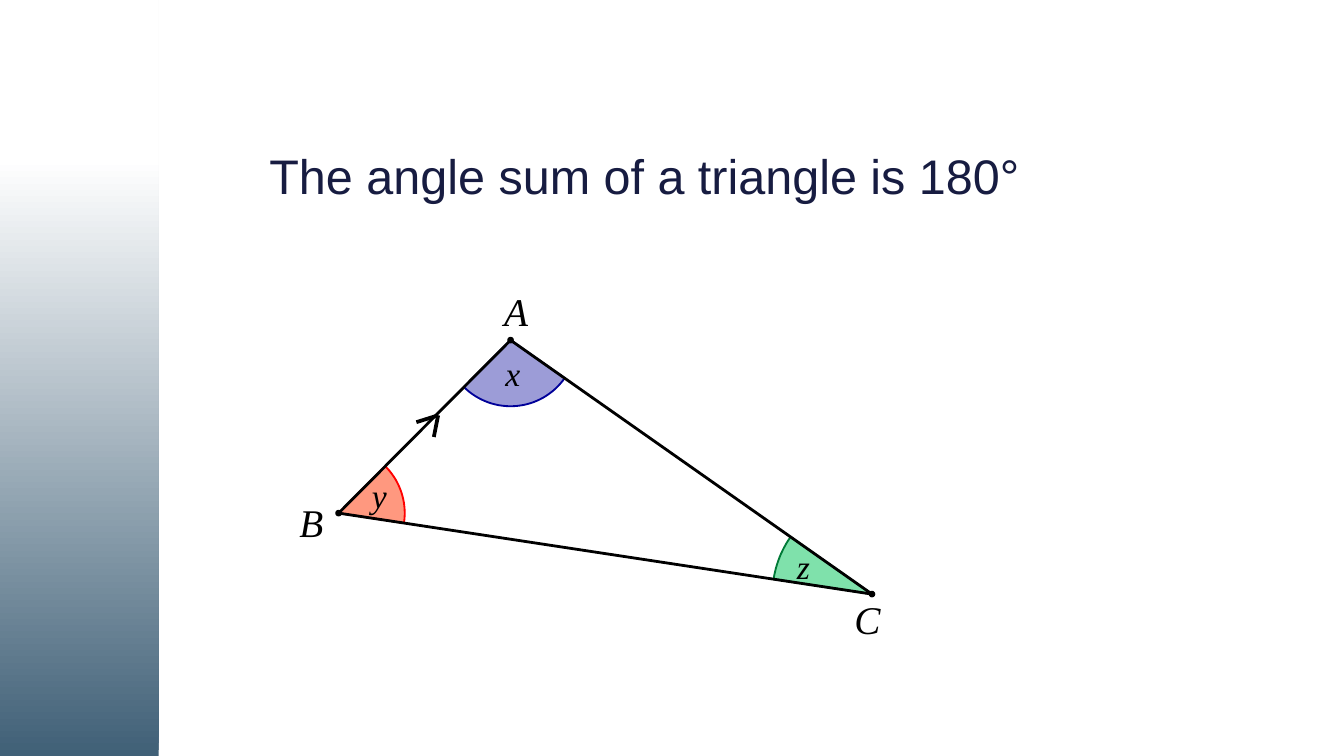
from math import atan2, cos, sin

from lxml.etree import SubElement
from pptx import Presentation
from pptx.dml.color import RGBColor
from pptx.enum.shapes import MSO_CONNECTOR as Connector, MSO_SHAPE as Shape
from pptx.enum.text import MSO_ANCHOR as Anchor
from pptx.oxml.ns import qn
from pptx.util import Cm, Pt

BLACK = RGBColor(0x00, 0x00, 0x00)
WHITE = RGBColor(0xFF, 0xFF, 0xFF)
NAVY = RGBColor(0x17, 0x1C, 0x41)
SLATE = RGBColor(0x40, 0x60, 0x77)
BLUE = RGBColor(0x00, 0x00, 0x99)
ORANGE = RGBColor(0xFF, 0x33, 0x00)
RED = RGBColor(0xFF, 0x00, 0x00)
GREEN = RGBColor(0x00, 0xC4, 0x59)
DARK_GREEN = RGBColor(0x00, 0x7A, 0x37)

TITLE_FORMAT = {"name": "Arial", "size": Pt(26)}
VERTEX_FORMAT = {"name": "Times New Roman", "size": Pt(21), "italic": True}
ANGLE_FORMAT = {"name": "Times New Roman", "size": Pt(18), "italic": True}

VERTICES = {"A": (4.05, 1.03), "B": (0.8, 4.3), "C": (10.88, 5.83)}
VERTEX_LABELS = {"A": (3.93, 0.04), "B": (0.06, 4.02), "C": (10.55, 5.85)}
ANGLE_LABELS = {"x": (3.7, 1.15), "y": (1.18, 3.44), "z": (9.21, 4.79)}
ANGLES = [
    ("A", "BC", 1.25, BLUE, 39, BLUE),
    ("B", "AC", 1.25, ORANGE, 50, RED),
    ("C", "AB", 1.88, GREEN, 50, DARK_GREEN),
]
ARROW_TIP = (2.68, 2.45)
ARROW_TAILS = [(2.6, 2.86), (2.27, 2.58)]


def add_text(page, text, box, formats, color, inset=(0, 0), wrap=True):
    """Place one styled line of text in a box of centimetres."""
    frame = page.shapes.add_textbox(*map(Cm, box)).text_frame
    frame.word_wrap = wrap
    frame.vertical_anchor = Anchor.TOP
    frame.margin_left = frame.margin_right = Cm(inset[0])
    frame.margin_top = frame.margin_bottom = Cm(inset[1])
    para = frame.paragraphs[0]
    span = para.add_run()
    span.text = text
    for name, value in formats.items():
        setattr(span.font, name, value)
    span.font.color.rgb = color
    return para


def add_line(page, start, end, width):
    """Draw a black straight line between two points."""
    line = page.shapes.add_connector(Connector.STRAIGHT, *map(Cm, (*start, *end)))
    line.line.color.rgb = BLACK
    line.line.width = Pt(width)
    SubElement(line._element.spPr, qn("a:effectLst"))


def add_sector(page, vertex, ends, radius, fill, opacity, outline):
    """Draw the translucent sector between two sides of an angle."""
    first, last = (atan2(y - vertex[1], x - vertex[0]) for x, y in ends)
    steps = 32
    turns = [first + (last - first) * step / steps for step in range(steps + 1)]
    arc = [
        (Cm(vertex[0] + radius * cos(turn)), Cm(vertex[1] + radius * sin(turn)))
        for turn in turns
    ]
    builder = page.shapes.build_freeform(*map(Cm, vertex))
    builder.add_line_segments(arc, close=True)
    sector = builder.convert_to_shape()
    sector.shadow.inherit = False
    sector.fill.solid()
    sector.fill.fore_color.rgb = fill
    color = sector._element.spPr.find(qn("a:solidFill"))[0]
    SubElement(color, qn("a:alpha"), val=str(opacity * 1000))
    sector.line.color.rgb = outline
    sector.line.width = Pt(1)


def add_dot(page, center):
    """Mark a vertex with a small black dot."""
    size = 0.1
    dot = page.shapes.add_shape(
        Shape.OVAL, Cm(center[0] - size / 2), Cm(center[1] - size / 2), Cm(size), Cm(size)
    )
    dot.shadow.inherit = False
    dot.fill.solid()
    dot.fill.fore_color.rgb = BLACK
    dot.line.color.rgb = BLACK
    dot.line.width = Pt(0)


def draw_sidebar(page, box):
    """Fill the left band with a gradient that fades upwards."""
    band = page.shapes.add_shape(Shape.RECTANGLE, *map(Cm, box))
    band.shadow.inherit = False
    band.line.fill.background()
    band.fill.gradient()
    band.fill.gradient_angle = 90
    stops = [(0, SLATE), (0.79, WHITE)]
    for stop, (position, color) in zip(band.fill.gradient_stops, stops):
        stop.position = position
        stop.color.rgb = color


def draw_title(page, box):
    """Write the statement above the diagram."""
    para = add_text(
        page, "The angle sum of a triangle is 180°", box, TITLE_FORMAT, NAVY, (0.19, 0.1)
    )
    para.line_spacing = 0.9


def draw_triangle(page, box):
    """Draw the labelled triangle with its three angles."""
    left, top = box

    def place(point):
        """Shift a diagram point onto the page."""
        return left + point[0], top + point[1]

    corners = {name: place(point) for name, point in VERTICES.items()}
    for name, ends, *style in ANGLES:
        add_sector(page, corners[name], [corners[end] for end in ends], *style)
    for start, end in ("AB", "AC", "BC"):
        add_line(page, corners[start], corners[end], 1.5)
    for tail in ARROW_TAILS:
        add_line(page, place(tail), place(ARROW_TIP), 0)
    for name, corner in corners.items():
        add_dot(page, corner)
        label_box = (*place(VERTEX_LABELS[name]), 0.47, 0.89)
        add_text(page, name, label_box, VERTEX_FORMAT, BLACK, wrap=False)
    for name, point in ANGLE_LABELS.items():
        label_box = (*place(point), 1.35, 1.02)
        add_text(page, name, label_box, ANGLE_FORMAT, BLACK, (0.25, 0.13))


def main():
    """Build and save the deck."""
    deck = Presentation()
    deck.slide_width, deck.slide_height = Cm(25.4), Cm(14.29)
    page = deck.slides.add_slide(deck.slide_layouts[6])
    draw_sidebar(page, (0, 0, 3, 14.29))
    draw_title(page, (4.9, 2.79, 16.38, 2.51))
    draw_triangle(page, (5.6, 5.4))
    deck.save("out.pptx")


if __name__ == "__main__":
    main()
